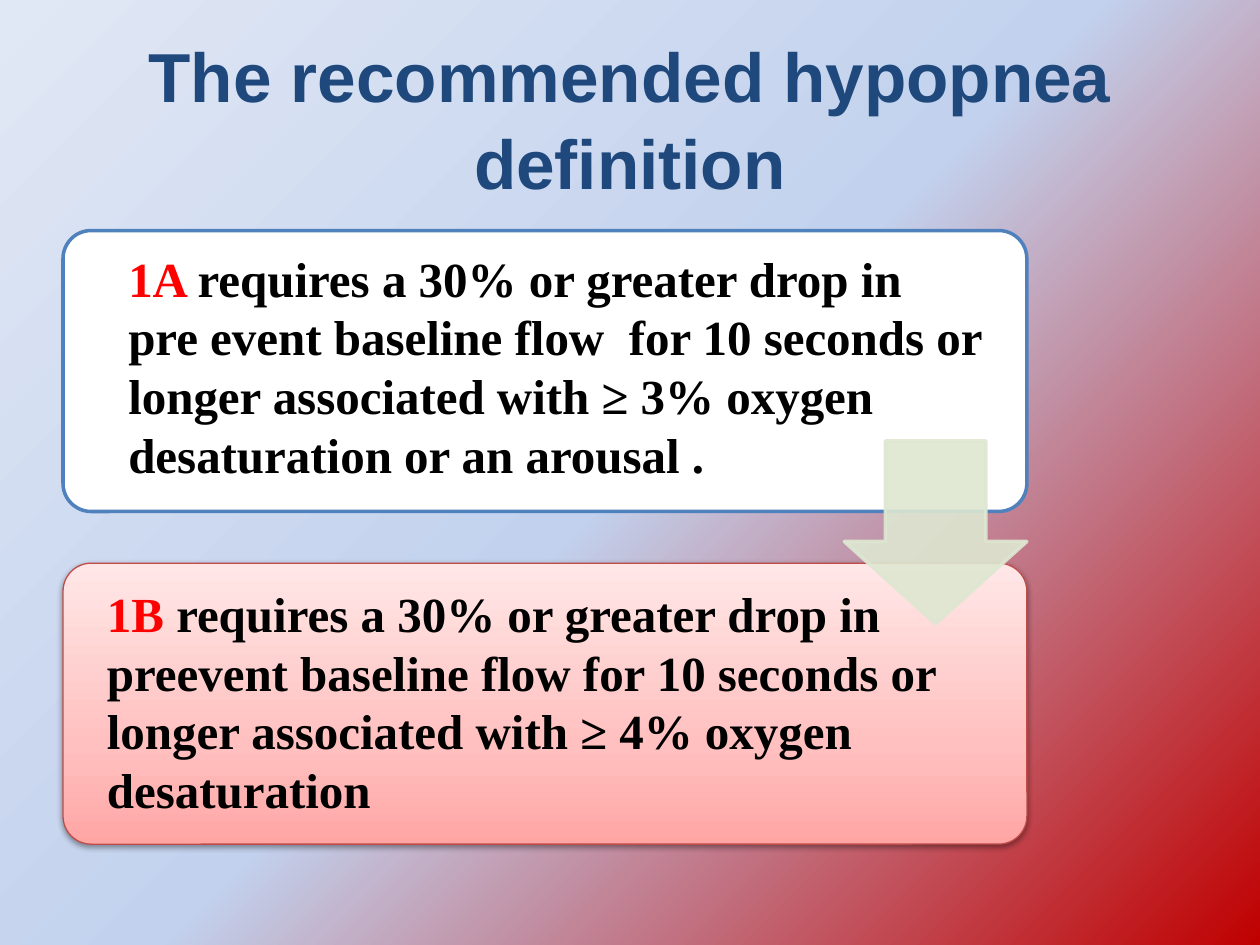
from dataclasses import dataclass

from lxml import etree
from pptx import Presentation
from pptx.dml.color import RGBColor
from pptx.enum.shapes import MSO_SHAPE
from pptx.enum.text import MSO_ANCHOR, PP_ALIGN
from pptx.oxml.ns import qn
from pptx.util import Inches, Pt

ROUND, DOWN = MSO_SHAPE.ROUNDED_RECTANGLE, MSO_SHAPE.DOWN_ARROW
LEFT, CENTER = PP_ALIGN.LEFT, PP_ALIGN.CENTER
TOP, MIDDLE = MSO_ANCHOR.TOP, MSO_ANCHOR.MIDDLE

WIDE, HIGH = 10, 7.5
COLORS = {
    "title": "1F497D", "label": "FF0000", "body": "000000",
    "white": "FFFFFF", "blue": "4F81BD", "red": "BF4C48", "green": "DEE7D1",
}
SKY = [(0, "C00000"), (50, "C2D1ED"), (100, "E1E8F5")]
ROSE = [(0, "FFA6A5"), (35, "FFC0BF"), (100, "FFE7E7")]

# Card rows: equal heights, a fixed step apart
CARD_X, CARD_Y, CARD_W, CARD_H, STEP = 0.5, 1.83, 7.65, 2.23, 2.64
ARROW = 1.45


@dataclass
class Rule:
    label: str
    text: str
    line: str
    weight: float
    x: float
    y: float
    width: float


RULES = [
    Rule("1A ", "requires a 30% or greater drop in  pre event baseline flow  "
         "for 10 seconds or longer associated with ≥ 3% oxygen "
         "desaturation or an arousal .", "blue", 2, 0.92, 1.92, 7),
    Rule("1B ", "requires a 30% or greater drop in preevent baseline flow "
         "for 10 seconds or longer associated with ≥ 4% oxygen "
         "desaturation", "red", 0.75, 0.75, 4.58, 7.42),
]


def rgb(name: str) -> RGBColor:
    return RGBColor.from_string(COLORS[name])


def node(parent, tag: str, **attrs):
    return etree.SubElement(parent, qn(tag), {k: str(v) for k, v in attrs.items()})


def blend(props, stops: list):
    """Swap the solid fill of props for a gradient, and return it."""
    grad = etree.Element(qn("a:gradFill"), rotWithShape="1")
    rows = node(grad, "a:gsLst")
    for share, color in stops:
        node(node(rows, "a:gs", pos=share * 1000), "a:srgbClr", val=color)
    props.replace(props.find(qn("a:solidFill")), grad)
    return grad


def write(frame, parts: list, size: float, font: str, align=LEFT,
          anchor=TOP, space: float = 1.0) -> None:
    frame.word_wrap = True
    frame.vertical_anchor = anchor
    para = frame.paragraphs[0]
    para.alignment, para.line_spacing = align, space
    for text, color in parts:
        run = para.add_run()
        run.text = text
        run.font.size, run.font.name, run.font.bold = Pt(size), font, True
        run.font.color.rgb = rgb(color)


def draw(shapes, kind, box: tuple, adjust: list, fill: str, line: str,
         weight: float):
    shape = shapes.add_shape(kind, *map(Inches, box))
    shape.shadow.inherit = False
    for i, value in enumerate(adjust):
        shape.adjustments[i] = value
    shape.fill.solid()
    shape.fill.fore_color.rgb = rgb(fill)
    shape.line.color.rgb = rgb(line)
    shape.line.width = Pt(weight)
    return shape


def main() -> None:
    deck = Presentation()
    deck.slide_width, deck.slide_height = Inches(WIDE), Inches(HIGH)
    slide = deck.slides.add_slide(deck.slide_layouts[5])

    # Background glowing from the lower right corner
    slide.background.fill.solid()
    grad = blend(slide.element.find(".//" + qn("p:bgPr")), SKY)
    node(node(grad, "a:path", path="circle"), "a:fillToRect", l=100000, t=100000)

    # Title
    title = slide.shapes.title
    title.left, title.top = Inches(0.5), Inches(0.3)
    title.width, title.height = Inches(9), Inches(1.25)
    write(title.text_frame, [("The recommended hypopnea definition", "title")],
          size=39.6, font="Arial", align=CENTER, anchor=MIDDLE, space=1.04)

    # Cards
    group = slide.shapes.add_group_shape().shapes
    cards = [draw(group, ROUND, (CARD_X, CARD_Y + i * STEP, CARD_W, CARD_H),
                  [0.1], "white", rule.line, rule.weight)
             for i, rule in enumerate(RULES)]

    # Rose fill and soft shadow of the lower card
    props = cards[1].element.spPr
    node(blend(props, ROSE), "a:lin", ang=270 * 60000, scaled=1)
    shade = node(props.find(qn("a:effectLst")), "a:outerShdw", blurRad=Pt(3.1),
                 dist=Pt(1.6), dir=90 * 60000, rotWithShape=0)
    node(node(shade, "a:srgbClr", val="000000"), "a:alpha", val=38000)

    # Arrow from card to card, flush with their right side
    arrow = draw(group, DOWN, (CARD_X + CARD_W - ARROW, 3.5, ARROW, ARROW),
                 [0.55, 0.45], "green", "green", 2)
    for color in arrow.element.spPr.iter(qn("a:srgbClr")):
        node(color, "a:alpha", val=90000)

    # Rule texts
    for rule in RULES:
        box = slide.shapes.add_textbox(
            *map(Inches, (rule.x, rule.y, rule.width, 1.99)))
        write(box.text_frame, [(rule.label, "label"), (rule.text, "body")],
              size=28, font="Times New Roman")

    deck.save("out.pptx")


if __name__ == "__main__":
    main()
